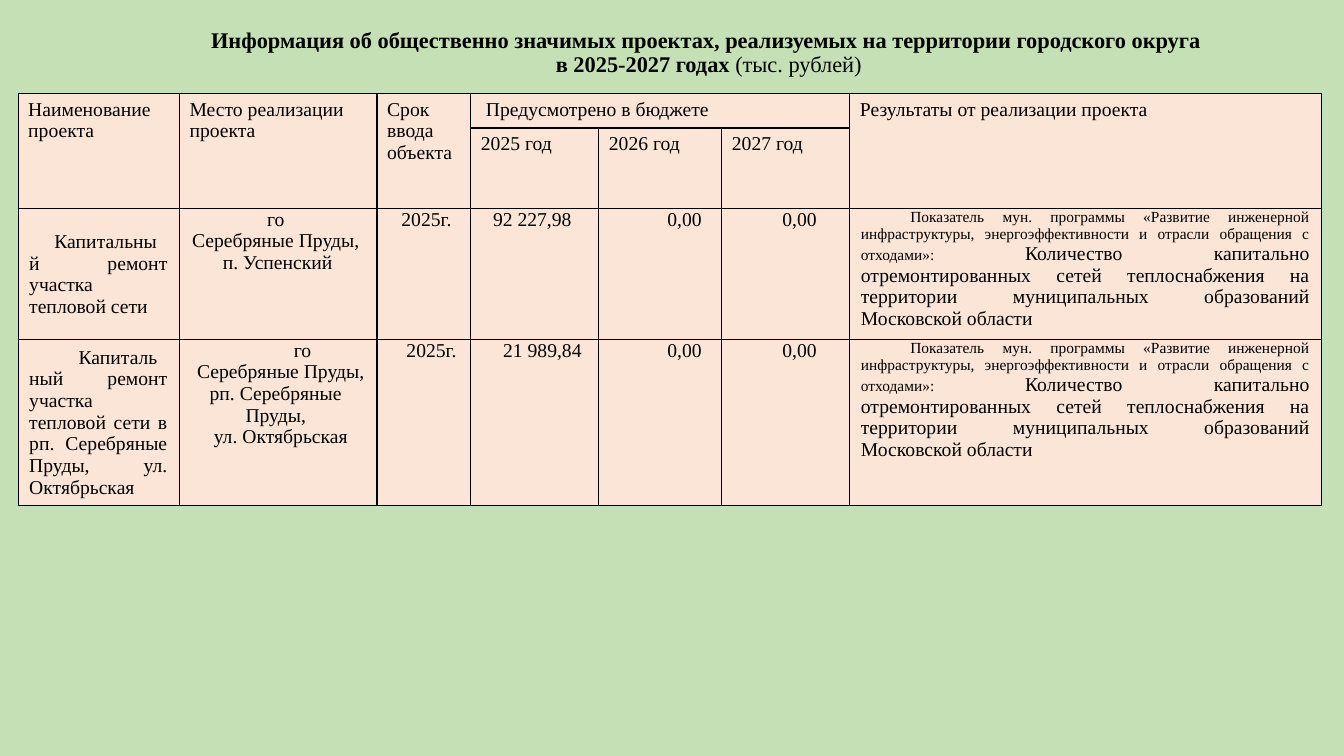
"""Build the slide with the table of socially significant projects."""
from lxml.etree import SubElement as Sub
from pptx import Presentation
from pptx.dml.color import RGBColor
from pptx.enum.text import MSO_ANCHOR as Anchor, PP_ALIGN as Align
from pptx.oxml.ns import qn
from pptx.util import Inches, Pt

LEFT, MID, JUST = Align.LEFT, Align.CENTER, Align.JUSTIFY


def paint(fill, tint):
    fill.solid()
    fill.fore_color.rgb = RGBColor.from_string(tint)


def write(para, text, size, bold=False):
    run = para.add_run()
    run.text = text
    form = {"name": "Times New Roman", "size": Pt(size), "bold": bold}
    for key, value in form.items():
        setattr(run.font, key, value)
    paint(run.font.fill, "000000")


deck = Presentation()
deck.slide_width, deck.slide_height = Inches(13.33), Inches(7.5)
slide = deck.slides.add_slide(deck.slide_layouts[6])
paint(slide.background.fill, "C5E0B4")

title = slide.shapes.add_textbox(Inches(0.43), Inches(-0.54), Inches(13.2), Inches(2.41))
frame = title.text_frame
form = {"word_wrap": True, "vertical_anchor": Anchor.MIDDLE, "margin_bottom": Inches(0.33)}
for key, value in form.items():
    setattr(frame, key, value)
para = frame.paragraphs[0]
para.alignment, para.line_spacing = MID, 0.9
write(para, "Информация об общественно значимых проектах, реализуемых на территории "
      "городского округа ", 16, True)
para.add_line_break()
write(para, "в 2025-2027 годах", 16, True)
write(para, " (тыс. рублей)", 16)

goal = [("Показатель мун. программы «Развитие инженерной инфраструктуры, "
         "энергоэффективности и отрасли обращения с отходами»: ", 11),
        ("Количество капитально отремонтированных сетей теплоснабжения на "
         "территории муниципальных образований Московской области", 14)]
zeros = [[(MID, 0.04, 0.49, "0,00")], [(JUST, 0.04, 0.49, "0,00")]]
result = [(JUST, 0.04, 0.49, goal)]

heads = {(0, 0): "Наименование проекта", (0, 1): "Место реализации проекта",
         (0, 2): "Срок ввода объекта", (0, 3): "Предусмотрено в бюджете",
         (0, 6): "Результаты от реализации проекта",
         (1, 3): "2025 год", (1, 4): "2026 год", (1, 5): "2027 год"}
cells = {spot: [(LEFT, 0, 0.05 if spot == (0, 3) else 0, text)]
         for spot, text in heads.items()}
works = [
    [[(JUST, 0.04, 0.25, "Капитальный ремонт участка тепловой сети")],
     [(MID, 0.04, -0.04, "го"),
      (MID, 0.04, -0.04, "Серебряные Пруды, п. Успенский")],
     [(MID, 0.04, 0.06, "2025г.")],
     [(MID, 0.04, -0.04, "92 227,98")], *zeros, result],
    [[(JUST, 0.04, 0.49, "Капитальный ремонт участка тепловой сети в "
       "рп. Серебряные Пруды, ул. Октябрьская")],
     [(MID, 0.04, 0.49, "го"),
      (MID, 0, 0.1, "Серебряные Пруды, рп. Серебряные Пруды,"),
      (MID, 0, 0.1, "ул. Октябрьская")],
     [(MID, 0.04, 0.16, "2025г.")],
     [(MID, 0.04, 0.16, "21 989,84")], *zeros, result],
]
for row, work in enumerate(works, 2):
    for col, paras in enumerate(work):
        cells[row, col] = paras

widths = [1.6, 1.96, 0.93, 1.27, 1.22, 1.27, 4.68]
heights = [0.34, 0.38, 1.24, 1.64]
table = slide.shapes.add_table(len(heights), len(widths), Inches(0.18), Inches(0.93),
                               Inches(12.93), Inches(sum(heights))).table
for col, width in zip(table.columns, widths):
    col.width = Inches(width)
for row, height in zip(table.rows, heights):
    row.height = Inches(height)
for col in (0, 1, 2, 6):
    table.cell(0, col).merge(table.cell(1, col))
table.cell(0, 3).merge(table.cell(0, 5))

for row in range(len(heights)):
    for col in range(len(widths)):
        cell = table.cell(row, col)
        props = cell._tc.get_or_add_tcPr()
        for side in ("a:lnL", "a:lnR", "a:lnT", "a:lnB"):
            line = Sub(props, qn(side), w=str(Pt(1)))
            Sub(Sub(line, qn("a:solidFill")), qn("a:srgbClr"), val="000000")
        paint(cell.fill, "FBE5D6")
        if row > 1:
            form = {"margin_left": Inches(0.07), "margin_right": Inches(0.07),
                    "margin_top": 0, "margin_bottom": 0,
                    "vertical_anchor": Anchor.TOP if col else Anchor.MIDDLE}
            for key, value in form.items():
                setattr(cell, key, value)
        frame = cell.text_frame
        for num, (align, left, first, text) in enumerate(cells.get((row, col), [])):
            para = frame.add_paragraph() if num else frame.paragraphs[0]
            para.alignment = align
            form = {"marL": left, "marR": 0.05 if row > 1 else 0, "indent": first}
            for key, value in form.items():
                para._p.get_or_add_pPr().set(key, str(Inches(value)))
            for part, size in [(text, 14)] if isinstance(text, str) else text:
                write(para, part, size)

deck.save("out.pptx")
